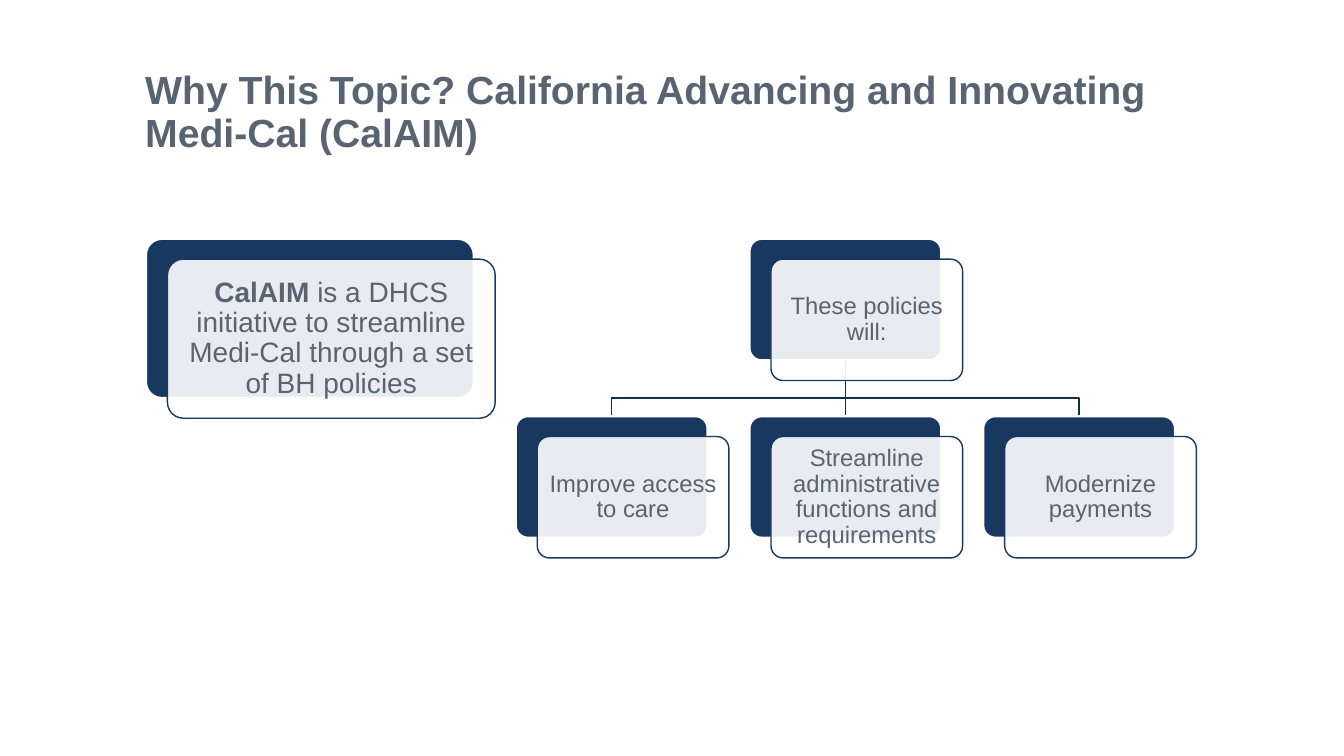
from lxml import etree
from pptx import Presentation, util as u
from pptx.dml.color import RGBColor
from pptx.enum import shapes, text
from pptx.oxml.ns import qn

INK = {"navy": "18385F", "line": "132D4C", "gray": "596473", "white": "FFFFFF"}


class Deck:
    font = "Arial"

    def __init__(self, slide):
        self.slide = slide

    def color(self, name):
        return RGBColor.from_string(INK[name])

    def label(self, frame, runs, size, align, anchor, inset):
        frame.word_wrap = True
        frame.vertical_anchor = anchor
        frame.margin_left = frame.margin_right = u.Cm(inset)
        frame.margin_top = frame.margin_bottom = u.Cm(inset)
        para = frame.paragraphs[0]
        para.alignment = align
        para.line_spacing = 0.9
        for words, bold in runs:
            run = para.add_run()
            run.text = words
            run.font.name = self.font
            run.font.size = u.Pt(size)
            run.font.bold = bold
            run.font.color.rgb = self.color("gray")

    def title(self, words, *spot):
        box = self.slide.shapes.add_textbox(*map(u.Cm, spot))
        self.label(box.text_frame, [(words, True)], 28,
                   text.PP_ALIGN.LEFT, text.MSO_ANCHOR.BOTTOM, 0)

    def link(self, *spots):
        points = [(u.Cm(x), u.Cm(y)) for x, y in spots]
        build = self.slide.shapes.build_freeform(*points[0])
        build.add_line_segments(points[1:], close=False)
        shape = build.convert_to_shape()
        shape.shadow.inherit = False
        shape.fill.background()
        shape.line.color.rgb = self.color("line")
        shape.line.width = u.Pt(1)

    def panel(self, spot, fill, edge, width):
        shape = self.slide.shapes.add_shape(
            shapes.MSO_SHAPE.ROUNDED_RECTANGLE, *map(u.Cm, spot))
        shape.shadow.inherit = False
        shape.adjustments[0] = 0.1
        shape.fill.solid()
        shape.fill.fore_color.rgb = self.color(fill)
        shape.line.color.rgb = self.color(edge)
        shape.line.width = u.Pt(width)
        return shape

    def card(self, runs, x, y, w, h, size, inset):
        self.panel((x, y, w, h), "navy", "white", 1.5)
        front = self.panel((x + 0.54, y + 0.51, w, h), "white", "navy", 1)
        solid = front.element.spPr.find(qn("a:solidFill"))
        etree.SubElement(solid[0], qn("a:alpha"), val="90000")
        self.label(front.text_frame, runs, size,
                   text.PP_ALIGN.CENTER, text.MSO_ANCHOR.MIDDLE, inset)


def main():
    show = Presentation()
    show.slide_width, show.slide_height = u.Cm(33.87), u.Cm(19.05)
    deck = Deck(show.slides.add_slide(show.slide_layouts[6]))
    deck.title("Why This Topic? California Advancing and Innovating "
               "Medi-Cal (CalAIM)", 3.66, 1.02, 26.47, 2.9)

    wide, high = 4.83, 3.06
    top, low = 6.02, 10.49
    cols = [13 + 5.89 * i for i in range(3)]
    mids = [x + wide / 2 for x in cols]
    root, bend = mids[1], 10.03
    start = top + high
    deck.link((root, start), (root, bend), (mids[2], bend), (mids[2], low))
    deck.link((root, start), (root, low))
    deck.link((root, start), (root, bend), (mids[0], bend), (mids[0], low))

    deck.card([("CalAIM ", True),
               ("is a DHCS initiative to streamline Medi-Cal "
                "through a set of BH policies", False)],
              3.68, top, 8.26, 4.01, 20, 0.2)
    goals = ["Improve access to care",
             "Streamline administrative functions and requirements",
             "Modernize payments"]
    cards = [("These policies will:", cols[1], top)]
    cards += [(goal, x, low) for goal, x in zip(goals, cols)]
    for words, x, y in cards:
        deck.card([(words, False)], x, y, wide, high, 17, 0.18)

    show.save("out.pptx")


if __name__ == "__main__":
    main()
